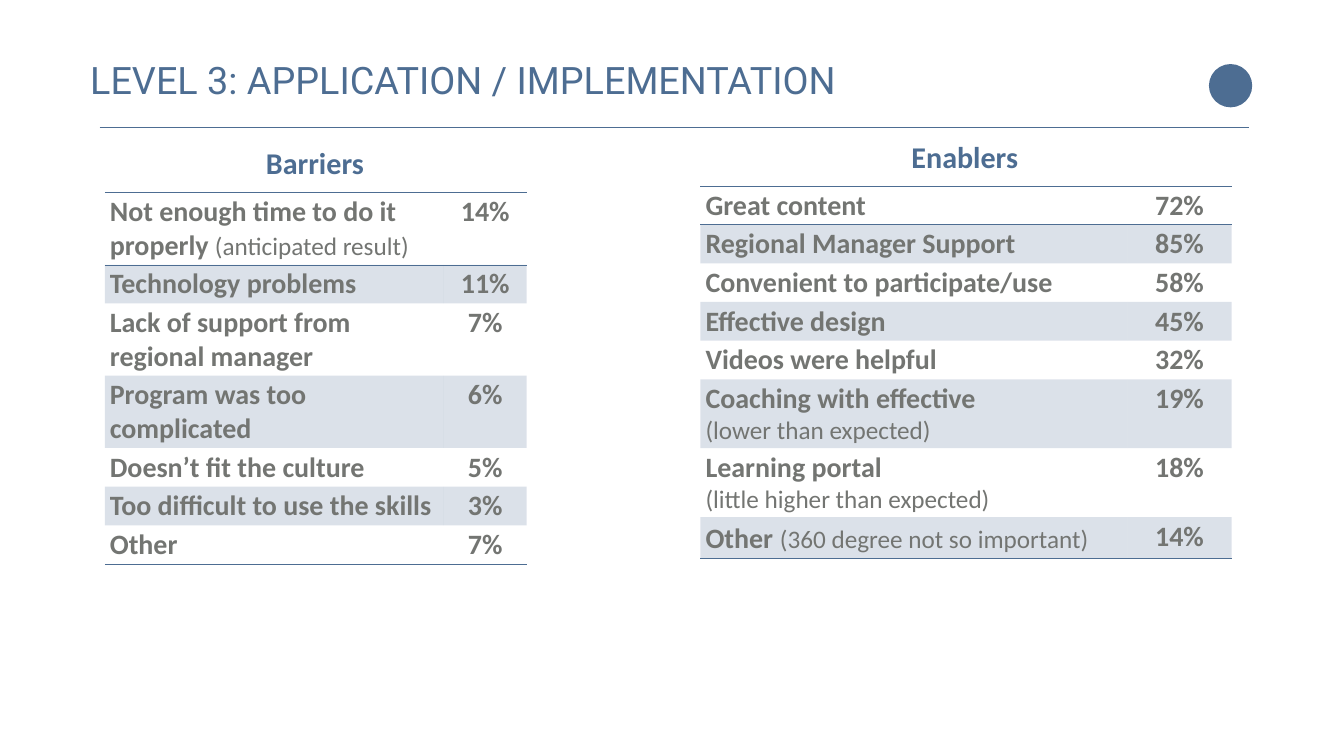
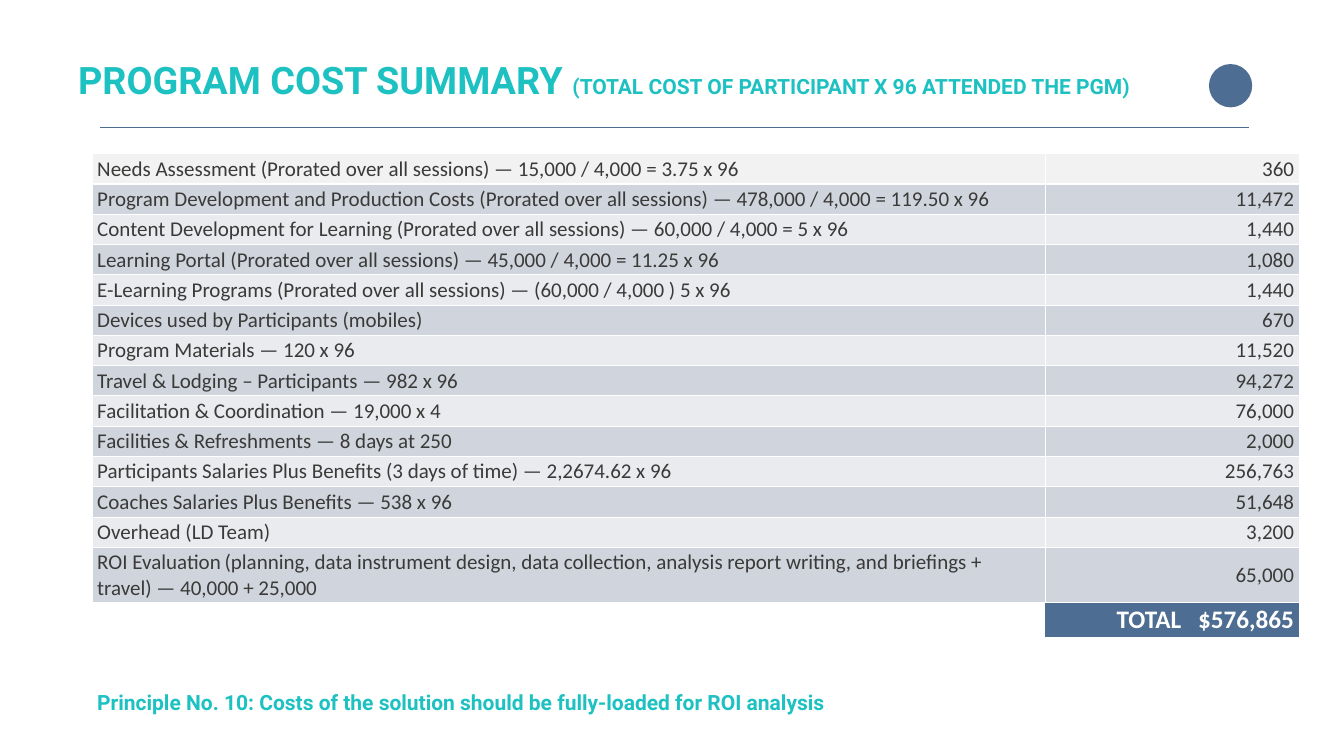
from dataclasses import dataclass, field
from typing import Any, NamedTuple

from lxml.etree import SubElement
from pptx import Presentation
from pptx.dml.color import RGBColor
from pptx.enum.shapes import MSO_CONNECTOR, MSO_SHAPE
from pptx.enum.text import MSO_ANCHOR as Anchor
from pptx.enum.text import MSO_AUTO_SIZE as AutoSize
from pptx.enum.text import PP_ALIGN as Align
from pptx.oxml.ns import qn
from pptx.util import Inches, Pt

SLIDE_W, SLIDE_H = Inches(26.67), Inches(15)
MIN_ROW_H = Inches(0.41)
NO_STYLE_NO_GRID = "{2D5ABB26-0587-4C30-8999-92F81FD0307C}"

BLUE = RGBColor(0x4D, 0x6D, 0x92)
GREY = RGBColor(0x73, 0x75, 0x72)
CHARCOAL = RGBColor(0x3A, 0x3A, 0x39)
WHITE = RGBColor(0xFF, 0xFF, 0xFF)
FIRST_COST = RGBColor(0xF2, 0xF2, 0xF2)
DARK_BAND = RGBColor(0xD0, 0xD4, 0xDC)
LIGHT_BAND = RGBColor(0xE9, 0xEB, 0xEE)
TEAL_STOPS = {
    0: RGBColor(0x75, 0xEC, 0xEC),
    75: RGBColor(0x1D, 0xC1, 0xC1),
    100: RGBColor(0x00, 0x92, 0x92),
}


class Box(NamedTuple):
    """Left, top, width and height in percent of the slide."""
    left: float
    top: float
    width: float
    height: float


class Look(NamedTuple):
    """Font values; a colour of None stands for the teal gradient."""
    font: dict[str, Any]
    color: RGBColor | None
    spacing: float = 0


class Span(NamedTuple):
    text: str
    look: Look


@dataclass
class Row:
    cells: list[list[Span]]
    fill: RGBColor | None = None
    opacity: int = 100
    borders: dict[str, float] = field(default_factory=dict)


@dataclass
class Grid:
    box: Box
    columns: list[float]
    aligns: list[Align]
    anchor: Anchor
    border_color: RGBColor
    rows: list[Row]


def look(name: str, size: float, color: RGBColor | None, bold: bool = False,
         spacing: float = 0) -> Look:
    return Look({"name": name, "size": Pt(size), "bold": bold}, color, spacing)


TITLE = look("Roboto", 54, BLUE)
TEAL_TITLE = look("Roboto", 54, None, True)
TEAL_SMALL = look("Roboto", 30, None, True)
HEADING = look("Calibri", 43, BLUE, True)
ANSWER = look("Calibri", 40, GREY, True)
ANSWER_GAP = look("Calibri", 43, GREY, True)
REMARK = look("Calibri", 36, GREY)
COST = look("Calibri", 30, CHARCOAL)
COST_GAP = look("Calibri", 23, CHARCOAL)
TOTAL = look("Calibri", 36, WHITE, True)
TOTAL_GAP = look("Calibri", 36, WHITE, True, 16)
BREAK = Span("\n", ANSWER)

BARRIERS = [
    ([Span("Not enough time to do it properly ", ANSWER), Span("(anticipated result)", REMARK)], "14%"),
    ("Technology problems", "11%"),
    ("Lack of support from regional manager", "7%"),
    ("Program was too complicated", "6%"),
    ("Doesn’t fit the culture", "5%"),
    ("Too difficult to use the skills", "3%"),
    ("Other", "7%"),
]
ENABLERS = [
    ("Great content", "72%"),
    ("Regional Manager Support", "85%"),
    ("Convenient to participate/use", "58%"),
    ("Effective design", "45%"),
    ("Videos were helpful", "32%"),
    ([Span("Coaching with effective ", ANSWER), BREAK, Span("(lower than expected)", REMARK)], "19%"),
    ([Span("Learning portal ", ANSWER), BREAK, Span("(little higher than expected)", REMARK)], "18%"),
    ([Span("Other", ANSWER), Span(" ", ANSWER_GAP), Span("(360 degree not so important)", REMARK)], "14%"),
]
COSTS = [
    ("Needs Assessment (Prorated over all sessions) — 15,000 / 4,000 = 3.75 x 96", "360"),
    ("Program Development and Production Costs (Prorated over all sessions) — "
     "478,000 / 4,000 = 119.50 x 96", "11,472"),
    ("Content Development for Learning (Prorated over all sessions) — 60,000 / 4,000 = 5 x 96", "1,440"),
    ("Learning Portal (Prorated over all sessions) — 45,000 / 4,000 = 11.25 x 96", "1,080"),
    ("E-Learning Programs (Prorated over all sessions) — (60,000 / 4,000 ) 5 x 96", "1,440"),
    ("Devices used by Participants (mobiles)", "670"),
    ("Program Materials — 120 x 96", "11,520"),
    ("Travel & Lodging – Participants — 982 x 96", "94,272"),
    ("Facilitation & Coordination — 19,000 x 4", "76,000"),
    ("Facilities & Refreshments — 8 days at 250", "2,000"),
    ("Participants Salaries Plus Benefits (3 days of time) — 2,2674.62 x 96", "256,763"),
    ("Coaches Salaries Plus Benefits — 538 x 96", "51,648"),
    ("Overhead (LD Team)", "3,200"),
    ([Span("ROI Evaluation", COST), Span(" ", COST_GAP),
      Span("(planning, data instrument design, data collection, analysis report writing, "
           "and briefings + travel) — 40,000 + 25,000", COST)], "65,000"),
]


def across(share: float) -> int:
    return round(SLIDE_W * share / 100)


def down(share: float) -> int:
    return round(SLIDE_H * share / 100)


def place(box: Box) -> tuple[int, int, int, int]:
    return across(box.left), down(box.top), across(box.width), down(box.height)


def spans(text: str | list[Span], style: Look) -> list[Span]:
    return [Span(text, style)] if isinstance(text, str) else text


def add_teal_gradient(properties) -> None:
    gradient = properties.makeelement(qn("a:gradFill"), {"rotWithShape": "1"})
    stops = SubElement(gradient, qn("a:gsLst"))
    for position, color in TEAL_STOPS.items():
        stop = SubElement(stops, qn("a:gs"), pos=str(position * 1000))
        SubElement(stop, qn("a:srgbClr"), val=str(color))
    SubElement(gradient, qn("a:lin"), ang="5400000", scaled="0")
    properties.insert(0, gradient)


def write(paragraph, text: list[Span], align: Align = Align.LEFT) -> None:
    paragraph.alignment = align
    for span in text:
        if span == BREAK:
            paragraph.add_line_break()
            continue
        run = paragraph.add_run()
        run.text = span.text
        for key, value in span.look.font.items():
            setattr(run.font, key, value)
        properties = run._r.get_or_add_rPr()
        if span.look.color is None:
            add_teal_gradient(properties)
        else:
            run.font.color.rgb = span.look.color
        if span.look.spacing:
            properties.set("spc", str(round(span.look.spacing * 100)))


def add_text(slide, box: Box, text: list[Span], wrap: bool = True) -> None:
    frame = slide.shapes.add_textbox(*place(box)).text_frame
    for key, value in {"word_wrap": wrap, "auto_size": AutoSize.SHAPE_TO_FIT_TEXT}.items():
        setattr(frame, key, value)
    write(frame.paragraphs[0], text)


def add_borders(cell, widths: dict[str, float], color: RGBColor) -> None:
    """Draw the sides named L, R, T or B, with widths in points."""
    properties = cell._tc.get_or_add_tcPr()
    for side in "LRTB":
        if side in widths:
            line = SubElement(properties, qn(f"a:ln{side}"), w=str(Pt(widths[side])))
            SubElement(SubElement(line, qn("a:solidFill")), qn("a:srgbClr"), val=str(color))


def fill_cell(cell, color: RGBColor | None, opacity: int) -> None:
    if color is None:
        cell.fill.background()
        return
    cell.fill.solid()
    cell.fill.fore_color.rgb = color
    if opacity < 100:
        tint = cell._tc.tcPr.find(f"{qn('a:solidFill')}/{qn('a:srgbClr')}")
        SubElement(tint, qn("a:alpha"), val=str(opacity * 1000))


def add_grid(slide, grid: Grid) -> None:
    holder = slide.shapes.add_table(len(grid.rows), len(grid.columns), *place(grid.box))
    table = holder.table
    table.first_row = table.horz_banding = False
    table._tbl.tblPr.find(qn("a:tableStyleId")).text = NO_STYLE_NO_GRID
    for column, share in zip(table.columns, grid.columns):
        column.width = across(share)
    for table_row, row in zip(table.rows, grid.rows):
        table_row.height = MIN_ROW_H
        for cell, text, align in zip(table_row.cells, row.cells, grid.aligns):
            cell.vertical_anchor = grid.anchor
            write(cell.text_frame.paragraphs[0], text, align)
            add_borders(cell, row.borders, grid.border_color)
            fill_cell(cell, row.fill, row.opacity)
    holder.height = down(grid.box.height)


def start_slide(deck, title_box: Box, title: list[Span]):
    """Add a blank slide with the shared dot, rule and title."""
    slide = deck.slides.add_slide(deck.slide_layouts[6])
    dot = slide.shapes.add_shape(MSO_SHAPE.OVAL, *place(Box(89.95, 8.47, 3.22, 5.73)))
    dot.shadow.inherit = False
    dot.fill.solid()
    dot.fill.fore_color.rgb = BLUE
    dot.line.fill.background()
    rule = slide.shapes.add_connector(
        MSO_CONNECTOR.STRAIGHT, across(7.42), down(16.87), across(92.95), down(16.87))
    rule.line.color.rgb = BLUE
    rule.line.width = Pt(2.25)
    SubElement(rule._element.spPr, qn("a:effectLst"))
    add_text(slide, title_box, title)
    return slide


def survey_grid(box: Box, columns: list[float], answers: list) -> Grid:
    rows = []
    for index, (answer, percent) in enumerate(answers):
        borders = {"T": 1, "B": 1} if index == 0 else {}
        if index == len(answers) - 1:
            borders = {"B": 1}
        rows.append(Row([spans(answer, ANSWER), spans(percent, ANSWER)],
                        BLUE if index % 2 else None, 20, borders))
    return Grid(box, columns, [Align.LEFT, Align.CENTER], Anchor.TOP, BLUE, rows)


def cost_grid() -> Grid:
    rows = []
    for index, (item, amount) in enumerate(COSTS):
        fill = DARK_BAND if index % 2 else LIGHT_BAND
        borders = {"L": 1, "R": 1, "T": 3 if index == 1 else 1, "B": 3 if index == 0 else 1}
        rows.append(Row([spans(item, COST), spans(amount, COST)],
                        fill if index else FIRST_COST, borders=borders))
    return Grid(Box(6.86, 20.33, 89.8, 59.33), [70.9, 18.9],
                [Align.LEFT, Align.RIGHT], Anchor.MIDDLE, WHITE, rows)


def total_grid() -> Grid:
    total = [Span("TOTAL", TOTAL), Span(" ", TOTAL_GAP), Span("$576,865", TOTAL)]
    row = Row([total], BLUE, borders={"L": 1, "R": 1, "T": 1, "B": 3})
    return Grid(Box(77.69, 79.67, 18.97, 4.67), [18.97], [Align.RIGHT], Anchor.MIDDLE, WHITE, [row])


def add_application_slide(deck) -> None:
    slide = start_slide(deck, Box(6.34, 7.13, 70.87, 6.73),
                        [Span("LEVEL 3: APPLICATION / IMPLEMENTATION", TITLE)])
    add_grid(slide, survey_grid(Box(52.12, 24.6, 39.52, 49.2), [31.76, 7.76], ENABLERS))
    add_grid(slide, survey_grid(Box(7.8, 25.47, 31.4, 49.13), [25.23, 6.15], BARRIERS))
    add_text(slide, Box(19.42, 18.73, 8.14, 5.47), [Span("Barriers", HEADING)], wrap=False)
    add_text(slide, Box(67.45, 18, 8.81, 5.47), [Span("Enablers", HEADING)], wrap=False)


def add_cost_slide(deck) -> None:
    slide = start_slide(deck, Box(5.44, 7.13, 84.78, 6.73), [
        Span("PROGRAM COST SUMMARY ", TEAL_TITLE),
        Span("(TOTAL COST OF PARTICIPANT X 96 ATTENDED THE PGM)", TEAL_SMALL)])
    add_grid(slide, cost_grid())
    add_text(slide, Box(6.86, 90.87, 88.6, 4.07), [
        Span("Principle No. 10: Costs of the solution should be fully-loaded for ROI analysis", TEAL_SMALL)])
    add_grid(slide, total_grid())


def main() -> None:
    deck = Presentation()
    deck.slide_width, deck.slide_height = SLIDE_W, SLIDE_H
    add_application_slide(deck)
    add_cost_slide(deck)
    deck.save("out.pptx")


if __name__ == "__main__":
    main()
